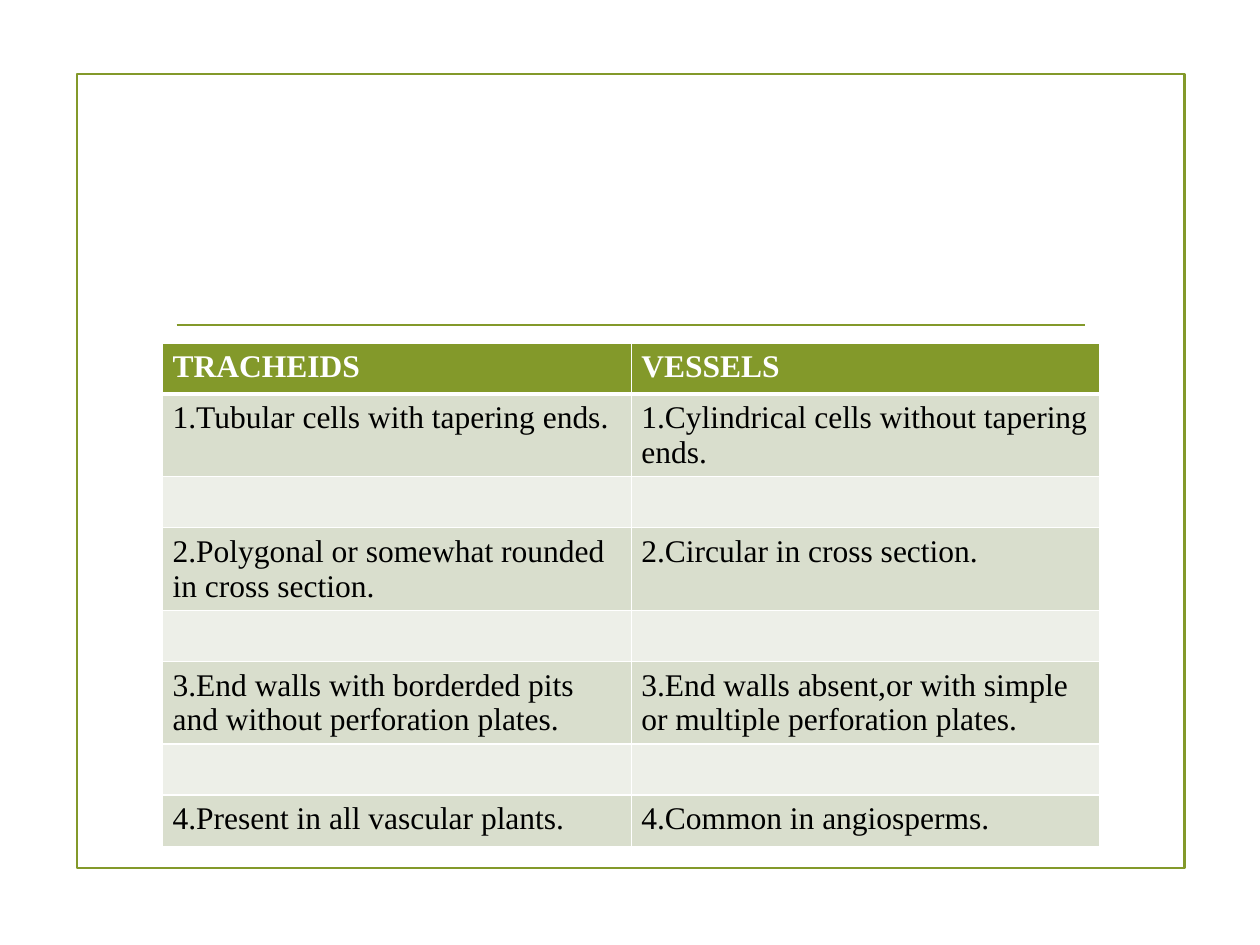
from dataclasses import dataclass
from typing import NamedTuple

from lxml import etree
from pptx import Presentation
from pptx.dml.color import RGBColor
from pptx.enum.shapes import MSO_CONNECTOR, MSO_SHAPE
from pptx.oxml.ns import qn
from pptx.util import Cm, Pt

RECTANGLE = MSO_SHAPE.RECTANGLE
STRAIGHT = MSO_CONNECTOR.STRAIGHT
BLANK_LAYOUT = 6


@dataclass(frozen=True)
class Theme:
    font: str = "Times New Roman"
    text_size: float = 18
    rule_width: float = 1.25
    border_width: float = 1
    header_border_width: float = 3
    accent: str = "83992A"
    band_dark: str = "D9DECD"
    band_light: str = "EDEFE8"
    header_text: str = "FFFFFF"
    body_text: str = "000000"
    border: str = "FFFFFF"


class Comparison(NamedTuple):
    tracheids: str
    vessels: str


THEME = Theme()
HEADER = Comparison("TRACHEIDS", "VESSELS")
SPACER = Comparison("", "")
DIFFERENCES = [
    Comparison("1.Tubular cells with tapering ends.",
               "1.Cylindrical cells without tapering ends."),
    Comparison("2.Polygonal or somewhat rounded in cross section.",
               "2.Circular in cross section."),
    Comparison("3.End walls with borderded pits and without perforation plates.",
               "3.End walls absent,or with simple or multiple perforation plates."),
    Comparison("4.Present in all vascular plants.",
               "4.Common in angiosperms."),
]


def rgb(value: str) -> RGBColor:
    return RGBColor.from_string(value)


def style_rule(line) -> None:
    line.color.rgb = rgb(THEME.accent)
    line.width = Pt(THEME.rule_width)


def draw_frame(slide) -> None:
    frame = slide.shapes.add_shape(RECTANGLE, Cm(1.55), Cm(1.5), Cm(22.33), Cm(16))
    frame.shadow.inherit = False
    frame.fill.background()
    style_rule(frame.line)


def draw_title_rule(slide) -> None:
    height = Cm(6.55)
    rule = slide.shapes.add_connector(STRAIGHT, Cm(3.56), height, Cm(21.87), height)
    style_rule(rule.line)
    etree.SubElement(rule._element.spPr, qn("a:effectLst"))


def set_borders(cell, top: float, bottom: float) -> None:
    """Draw all four cell edges; must run before the cell's fill is set."""
    properties = cell._tc.get_or_add_tcPr()
    side = THEME.border_width
    for tag, width in (("a:lnL", side), ("a:lnR", side), ("a:lnT", top), ("a:lnB", bottom)):
        edge = etree.SubElement(properties, qn(tag), w=str(Pt(width)))
        fill = etree.SubElement(edge, qn("a:solidFill"))
        etree.SubElement(fill, qn("a:srgbClr"), val=THEME.border)


def fill_cell(cell, text: str, row: int) -> None:
    is_header = row == 0
    thin, thick = THEME.border_width, THEME.header_border_width
    set_borders(cell, top=thick if row == 1 else thin, bottom=thick if is_header else thin)
    band = THEME.band_dark if row % 2 else THEME.band_light
    cell.fill.solid()
    cell.fill.fore_color.rgb = rgb(THEME.accent if is_header else band)
    cell.margin_left = cell.margin_right = Cm(0.2)
    cell.margin_top = cell.margin_bottom = Cm(0.13)
    cell.text = text
    font = cell.text_frame.paragraphs[0].font
    font.name = THEME.font
    font.size = Pt(THEME.text_size)
    font.bold = is_header
    font.color.rgb = rgb(THEME.header_text if is_header else THEME.body_text)


def draw_comparison_table(slide, differences: list[Comparison]) -> None:
    """Put a header on top and a blank band between each two differences."""
    rows = [HEADER, differences[0]]
    for difference in differences[1:]:
        rows += [SPACER, difference]
    column_width, row_height = Cm(9.45), Cm(1.03)
    columns = len(HEADER)
    table = slide.shapes.add_table(
        len(rows), columns, Cm(3.28), Cm(6.91),
        column_width * columns, row_height * len(rows)).table
    for row, comparison in enumerate(rows):
        table.rows[row].height = row_height
        for column, text in enumerate(comparison):
            fill_cell(table.cell(row, column), text, row)


def main() -> None:
    presentation = Presentation()
    presentation.slide_width, presentation.slide_height = Cm(25.4), Cm(19.05)
    slide = presentation.slides.add_slide(presentation.slide_layouts[BLANK_LAYOUT])
    draw_frame(slide)
    draw_title_rule(slide)
    draw_comparison_table(slide, DIFFERENCES)
    presentation.save("out.pptx")


if __name__ == "__main__":
    main()
